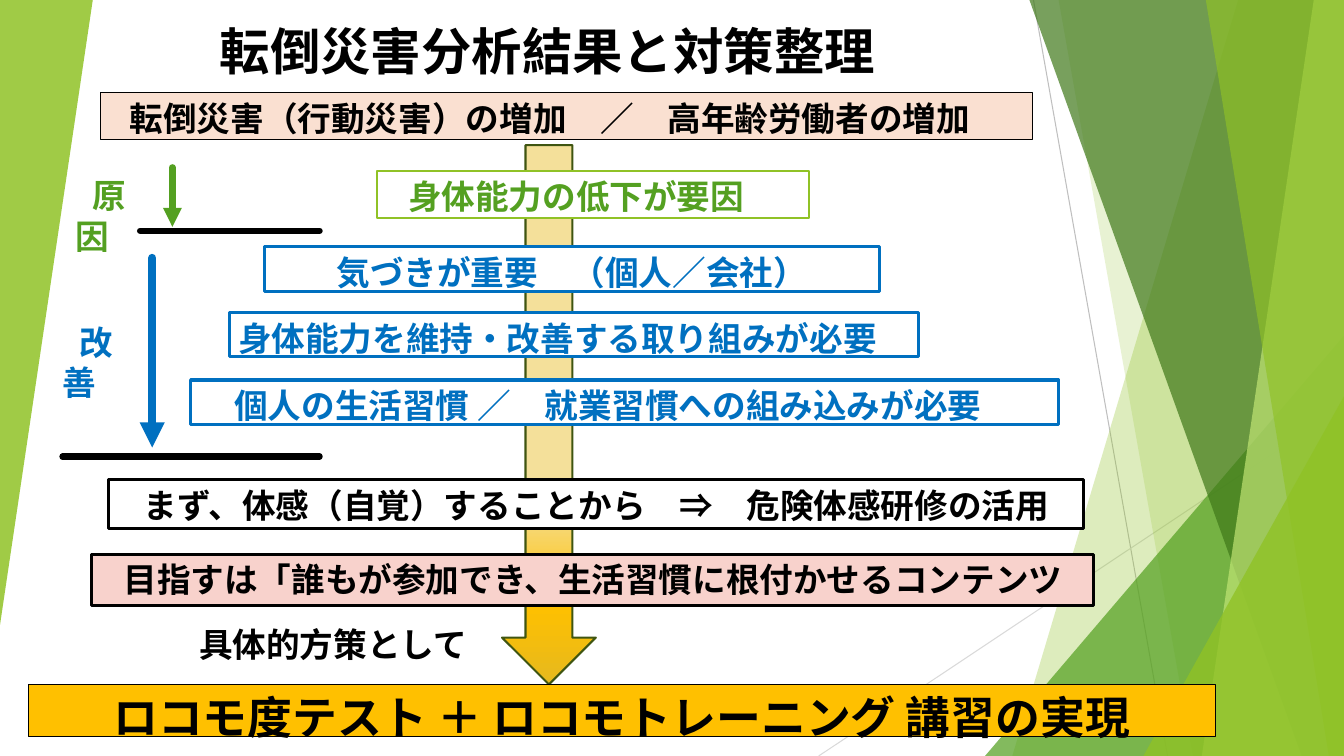
from lxml.etree import SubElement
from pptx import Presentation
from pptx.dml.color import RGBColor
from pptx.enum.shapes import MSO_CONNECTOR, MSO_SHAPE
from pptx.enum.text import MSO_ANCHOR, PP_ALIGN
from pptx.oxml.ns import qn
from pptx.util import Inches, Pt

FONT = "Roboto"
WIDTH, HEIGHT = 13.33, 7.5
BLACK, WHITE = "000000", "FFFFFF"
LEAF, GREEN, BLUE = "90C226", "54A021", "0070C0"

# left, top, width, height, text, text colour, fill, line colour, line width, text size
STEPS = [
    (2.28, 3.1, 6.83, 0.44, "身体能力を維持・改善する取り組みが必要　", BLUE, WHITE, BLUE, 2.25, 24),
    (1.89, 3.77, 8.61, 0.44, "個人の生活習慣 ／　就業習慣への組み込みが必要　", BLUE, WHITE, BLUE, 2.25, 24),
    (2.62, 2.45, 6.1, 0.44, "気づきが重要　（個人／会社）", BLUE, WHITE, BLUE, 2.25, 24),
    (0.91, 5.5, 9.94, 0.51, "目指すは「誰もが参加でき、生活習慣に根付かせるコンテンツ",
     BLACK, "F8D2CC", BLACK, 2.25, 24),
    (1.08, 4.76, 9.67, 0.48, "まず、体感（自覚）することから　⇒　危険体感研修の活用",
     BLACK, WHITE, BLACK, 2.25, 24),
    (0.28, 6.79, 11.78, 0.52, "ロコモ度テスト ＋ ロコモトレーニング 講習の実現",
     BLACK, "FFC000", BLACK, 0.75, 32),
    (1, 0.92, 9.24, 0.46, "転倒災害（行動災害）の増加　／　高年齢労働者の増加　",
     BLACK, "FAE0D1", BLACK, 0.75, 24),
    (3.74, 1.7, 4.28, 0.46, "身体能力の低下が要因　", GREEN, WHITE, LEAF, 1.5, 24),
]


def rgb(colour):
    return RGBColor.from_string(colour)


def paint(shape, colour, opacity=100):
    """Fill a shape without outline or shadow; opacity is in percent."""
    shape.shadow.inherit = False
    shape.line.fill.background()
    shape.fill.solid()
    shape.fill.fore_color.rgb = rgb(colour)
    if opacity < 100:
        tint = shape.fill._xPr.find(qn("a:solidFill"))[0]
        SubElement(tint, qn("a:alpha"), val=str(opacity * 1000))


def outline(shape, colour, width):
    shape.line.color.rgb = rgb(colour)
    shape.line.width = Pt(width)


def write(shape, text, colour, size, align=PP_ALIGN.CENTER, anchor=MSO_ANCHOR.TOP):
    frame = shape.text_frame
    frame.word_wrap = True
    frame.vertical_anchor = anchor
    paragraph = frame.paragraphs[0]
    paragraph.text = text
    paragraph.alignment = align
    font = paragraph.font
    font.name, font.size, font.bold = FONT, Pt(size), True
    font.color.rgb = rgb(colour)


def add_label(slide, left, top, width, height, text, colour=BLACK, size=24, **layout):
    label = slide.shapes.add_textbox(Inches(left), Inches(top), Inches(width), Inches(height))
    write(label, text, colour, size, **layout)


def add_step(slide, left, top, width, height, text, colour, fill, edge, edge_width, size):
    """Place a framed statement, with side margins narrow enough to keep it on one line."""
    step = slide.shapes.add_shape(
        MSO_SHAPE.RECTANGLE, Inches(left), Inches(top), Inches(width), Inches(height))
    paint(step, fill)
    outline(step, edge, edge_width)
    write(step, text, colour, size)
    step.text_frame.margin_left = step.text_frame.margin_right = Inches(0.03)


def add_line(slide, x1, y1, x2, y2, colour, width, rounded=False, arrow=False):
    line = slide.shapes.add_connector(
        MSO_CONNECTOR.STRAIGHT, Inches(x1), Inches(y1), Inches(x2), Inches(y2))
    outline(line, colour, width)
    stroke = line.line._get_or_add_ln()
    if rounded:
        stroke.set("cap", "rnd")
    if arrow:
        SubElement(stroke, qn("a:tailEnd"), type="triangle")
    SubElement(line._element.spPr, qn("a:effectLst"))


def add_band(slide, top_x, bottom_x, colour, opacity):
    """Fill from a slanted edge to the right side of the slide."""
    builder = slide.shapes.build_freeform(Inches(top_x), 0)
    corners = [(WIDTH, 0), (WIDTH, HEIGHT), (bottom_x, HEIGHT)]
    builder.add_line_segments([(Inches(x), Inches(y)) for x, y in corners])
    paint(builder.convert_to_shape(), colour, opacity)


def add_corner(slide, left, top, width, height, colour, opacity, rotation=0):
    corner = slide.shapes.add_shape(
        MSO_SHAPE.ISOSCELES_TRIANGLE, Inches(left), Inches(top), Inches(width), Inches(height))
    corner.adjustments[0] = 1
    corner.rotation = rotation
    paint(corner, colour, opacity)


def add_backdrop(slide):
    add_line(slide, 10.25, 0, 11.58, HEIGHT, "BFBFBF", 0.75)
    add_line(slide, WIDTH, 4.03, 8.12, HEIGHT, "D9D9D9", 0.75)
    add_band(slide, 12.28, 10.04, LEAF, 30)
    add_band(slide, 10.5, 11.83, LEAF, 20)
    add_corner(slide, 9.77, 3.33, 3.56, 4.17, GREEN, 72)
    add_band(slide, 10.21, 12.91, "3F7819", 70)
    add_band(slide, 13.03, 11.92, "C0E474", 70)
    add_band(slide, 11.96, 13.18, LEAF, 65)
    add_corner(slide, 11.34, 3.93, 1.99, 3.57, LEAF, 80)
    add_corner(slide, 0, 0, 0.92, 6.2, LEAF, 85, rotation=180)


def add_flow_arrow(slide):
    arrow = slide.shapes.add_shape(
        MSO_SHAPE.DOWN_ARROW, Inches(4.98), Inches(1.44), Inches(0.93), Inches(5.35))
    arrow.shadow.inherit = False
    outline(arrow, "3F5511", 1.5)
    arrow.fill.gradient()
    arrow.fill.gradient_angle = 270
    stops = arrow.fill._xPr.find(qn("a:gradFill")).find(qn("a:gsLst"))
    for stop in list(stops):
        stops.remove(stop)
    for position, colour in [(0, "F4E09A"), (66, "F4DF9A"), (85, "FFC000"), (100, "E6B91E")]:
        stop = SubElement(stops, qn("a:gs"), pos=str(position * 1000))
        SubElement(stop, qn("a:srgbClr"), val=colour)


def add_phase(slide, text, colour, label_left, label_top, arrow_x, arrow_top, arrow_bottom,
              arrow_width, rule_left, rule_y):
    """Place a phase name with its arrow and the rule that closes the phase."""
    add_line(slide, 3.17, rule_y, rule_left, rule_y, BLACK, 4.5, rounded=True)
    add_line(slide, arrow_x, arrow_top, arrow_x, arrow_bottom, colour, arrow_width,
             rounded=True, arrow=True)
    add_label(slide, label_left, label_top, 1.11, 0.46, text, colour)


def main():
    presentation = Presentation()
    presentation.slide_width, presentation.slide_height = Inches(WIDTH), Inches(HEIGHT)
    slide = presentation.slides.add_slide(presentation.slide_layouts[6])
    add_backdrop(slide)
    add_flow_arrow(slide)
    add_label(slide, 1.79, 6.14, 3.36, 0.46, "具体的方策として　")
    for step in STEPS:
        add_step(slide, *step)
    add_phase(slide, "原因　", GREEN, 0.53, 1.69, 1.71, 1.66, 2.25, 4.5, 1.39, 2.29)
    add_phase(slide, "改善　", BLUE, 0.4, 3.14, 1.51, 2.56, 4.44, 6, 0.62, 4.53)
    add_label(slide, 2.08, 0.16, 8.16, 0.69, "転倒災害分析結果と対策整理", size=36,
              align=PP_ALIGN.LEFT, anchor=MSO_ANCHOR.BOTTOM)
    presentation.save("out.pptx")


if __name__ == "__main__":
    main()
